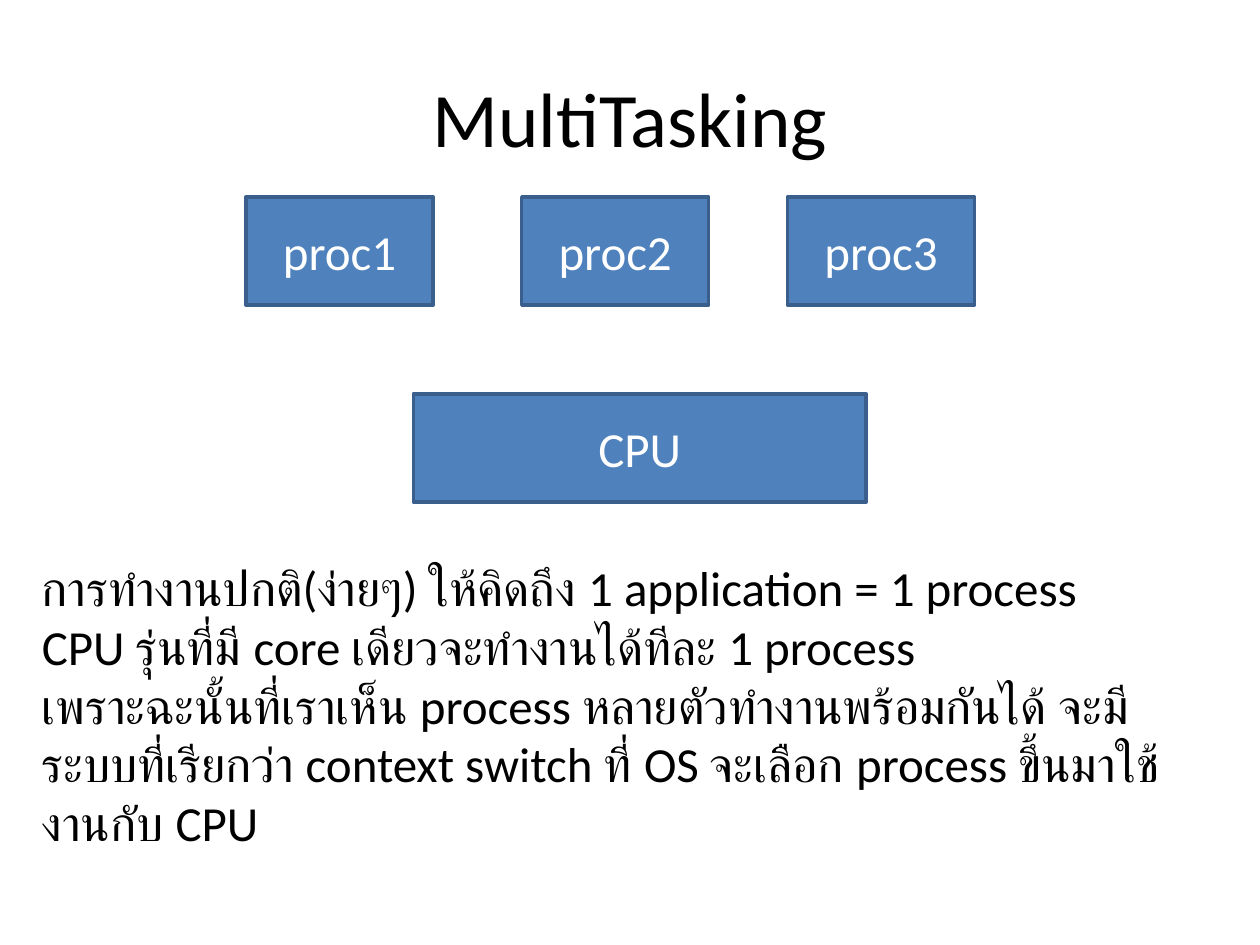
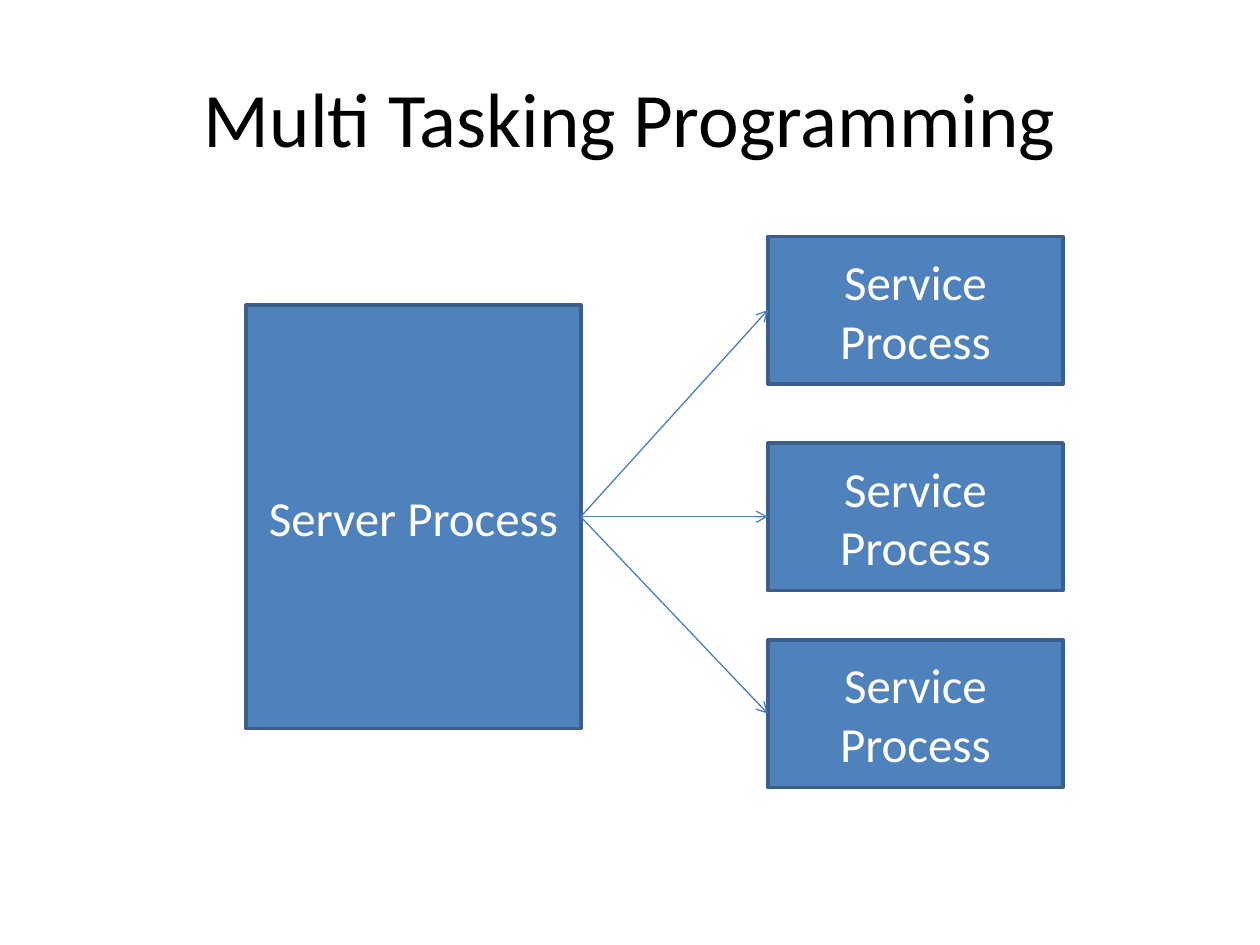
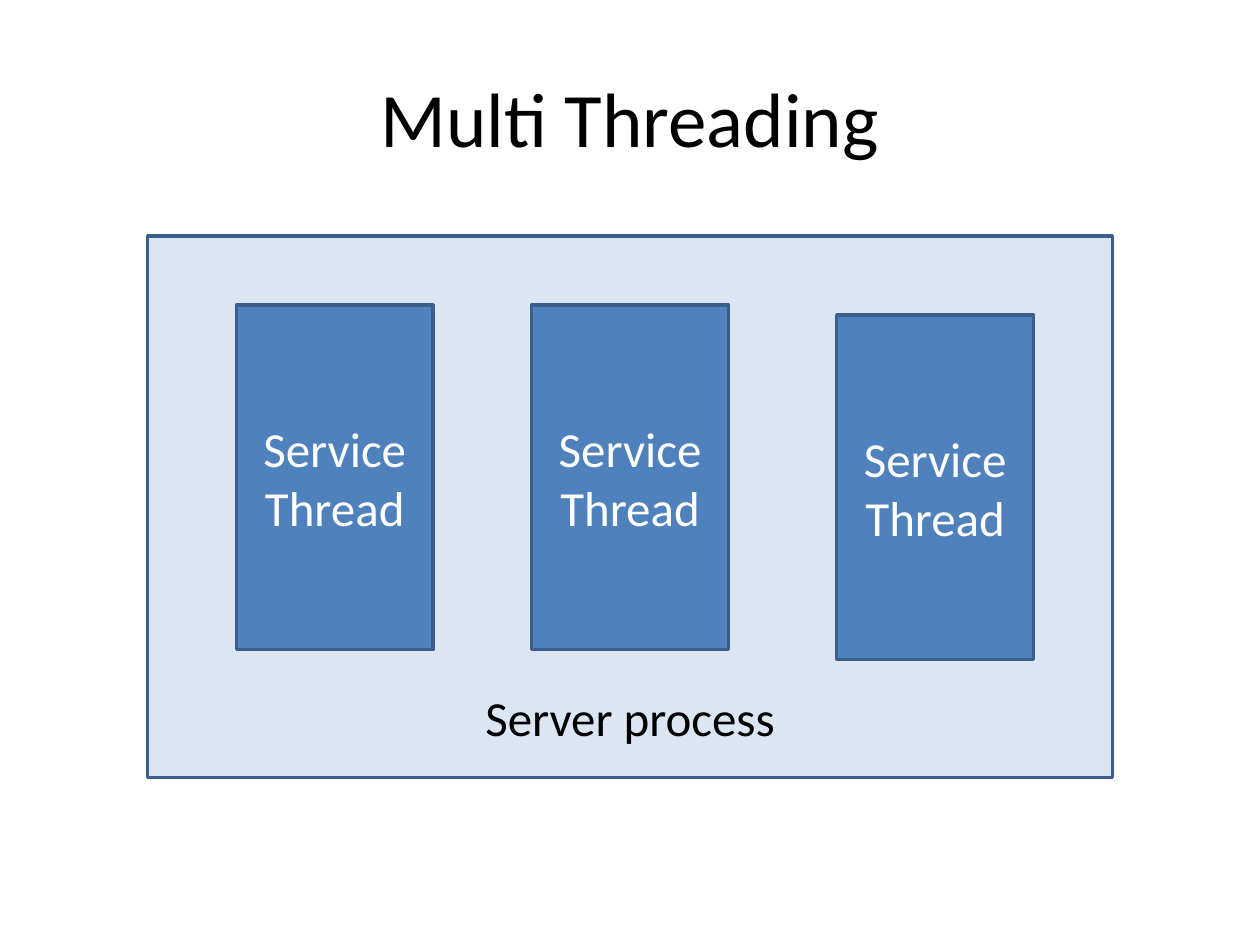
from lxml import etree
from pptx import Presentation
from pptx.dml.color import RGBColor
from pptx.enum.shapes import MSO_CONNECTOR, MSO_SHAPE
from pptx.enum.text import MSO_ANCHOR, PP_ALIGN
from pptx.oxml.ns import qn
from pptx.util import Inches, Pt

RECT, STRAIGHT = MSO_SHAPE.RECTANGLE, MSO_CONNECTOR.STRAIGHT
TOP, MIDDLE, BOTTOM = MSO_ANCHOR.TOP, MSO_ANCHOR.MIDDLE, MSO_ANCHOR.BOTTOM
LEFT, CENTER = PP_ALIGN.LEFT, PP_ALIGN.CENTER
LEFT_SITE, RIGHT_SITE = 1, 3

COLORS = {"box": "4F81BD", "edge": "3A5F8C", "arrow": "4B7EBC",
          "panel": "DCE6F2", "dark": "000000", "light": "FFFFFF"}
FONT = "Calibri"
COLS, ROWS = 128, 96  # square grid cells on a 4:3 slide


def rgb(name):
    return RGBColor.from_string(COLORS[name])


def write(tf, text, size=28, color="dark", align=CENTER, anchor=MIDDLE):
    """Fill a text frame, one paragraph per line of text."""
    tf.word_wrap = True
    tf.vertical_anchor = anchor
    for i, line in enumerate(text.split("\n")):
        p = tf.add_paragraph() if i else tf.paragraphs[0]
        p.alignment = align
        r = p.add_run()
        r.text = line
        r.font.name, r.font.size = FONT, Pt(size)
        r.font.color.rgb = rgb(color)


class Deck:
    def __init__(self):
        self.prs = Presentation()
        self.prs.slide_width, self.prs.slide_height = Inches(10), Inches(7.5)
        self.s = None

    def cells(self, x, y, w, h):
        """Turn columns and rows into lengths."""
        col, row = self.prs.slide_width / COLS, self.prs.slide_height / ROWS
        return [int(n) for n in (x * col, y * row, w * col, h * row)]

    def slide(self, title):
        self.s = self.prs.slides.add_slide(self.prs.slide_layouts[6])
        self.text(title, 6.4, 3.84, 115.2, 16, size=44)

    def text(self, text, x, y, w, h, **fmt):
        sp = self.s.shapes.add_textbox(*self.cells(x, y, w, h))
        write(sp.text_frame, text, **fmt)

    def box(self, text, x, y, w, h, fill="box", pad=None, **fmt):
        sp = self.s.shapes.add_shape(RECT, *self.cells(x, y, w, h))
        sp.shadow.inherit = False
        sp.fill.solid()
        sp.fill.fore_color.rgb = rgb(fill)
        sp.line.color.rgb = rgb("edge")
        sp.line.width = Pt(2)
        if pad is not None:
            sp.text_frame.margin_bottom = self.cells(0, 0, 0, pad)[3]
        write(sp.text_frame, text, **{"color": "light", **fmt})
        return sp

    def arrow(self, start, end):
        """Join the right side of one box to the left side of another."""
        c = self.s.shapes.add_connector(STRAIGHT, 0, 0, 0, 0)
        c.begin_connect(start, RIGHT_SITE)
        c.end_connect(end, LEFT_SITE)
        c.line.color.rgb = rgb("arrow")
        c.line.width = Pt(0.75)
        etree.SubElement(c.line._get_or_add_ln(), qn("a:tailEnd"), type="arrow")
        etree.SubElement(c._element.spPr, qn("a:effectLst"))


def multitasking(d):
    d.slide("MultiTasking")
    d.text("การทำงานปกติ(ง่ายๆ) ให้คิดถึง 1 application = 1 process\n"
           "CPU รุ่นที่มี core เดียวจะทำงานได้ทีละ 1 process\n"
           "เพราะฉะนั้นที่เราเห็น process หลายตัวทำงานพร้อมกันได้ "
           "จะมีระบบที่เรียกว่า context switch ที่ OS จะเลือก process "
           "ขึ้นมาใช้งานกับ CPU",
           3, 56, 122, 31.5, align=LEFT, anchor=TOP)
    for i, x in enumerate((25, 53, 80), 1):
        d.box(f"proc{i}", x, 20, 19, 11)
    d.box("CPU", 42, 40, 46, 11)


def multitasking_programming(d):
    d.slide("Multi Tasking Programming")
    server = d.box("Server Process", 25, 31, 34, 43)
    services = [d.box("Service Process", 78, y, 30, 15) for y in (24, 45, 65)]
    for service in services:
        d.arrow(server, service)


def multithreading(d):
    d.slide("Multi Threading")
    d.box("Server process", 15, 24, 98, 55, fill="panel", color="dark",
          anchor=BOTTOM, pad=3.2)
    for x, y in ((24, 31), (54, 31), (85, 32)):
        d.box("Service Thread", x, y, 20, 35)


def main():
    d = Deck()
    for build in (multitasking, multitasking_programming, multithreading):
        build(d)
    d.prs.save("out.pptx")


if __name__ == "__main__":
    main()
